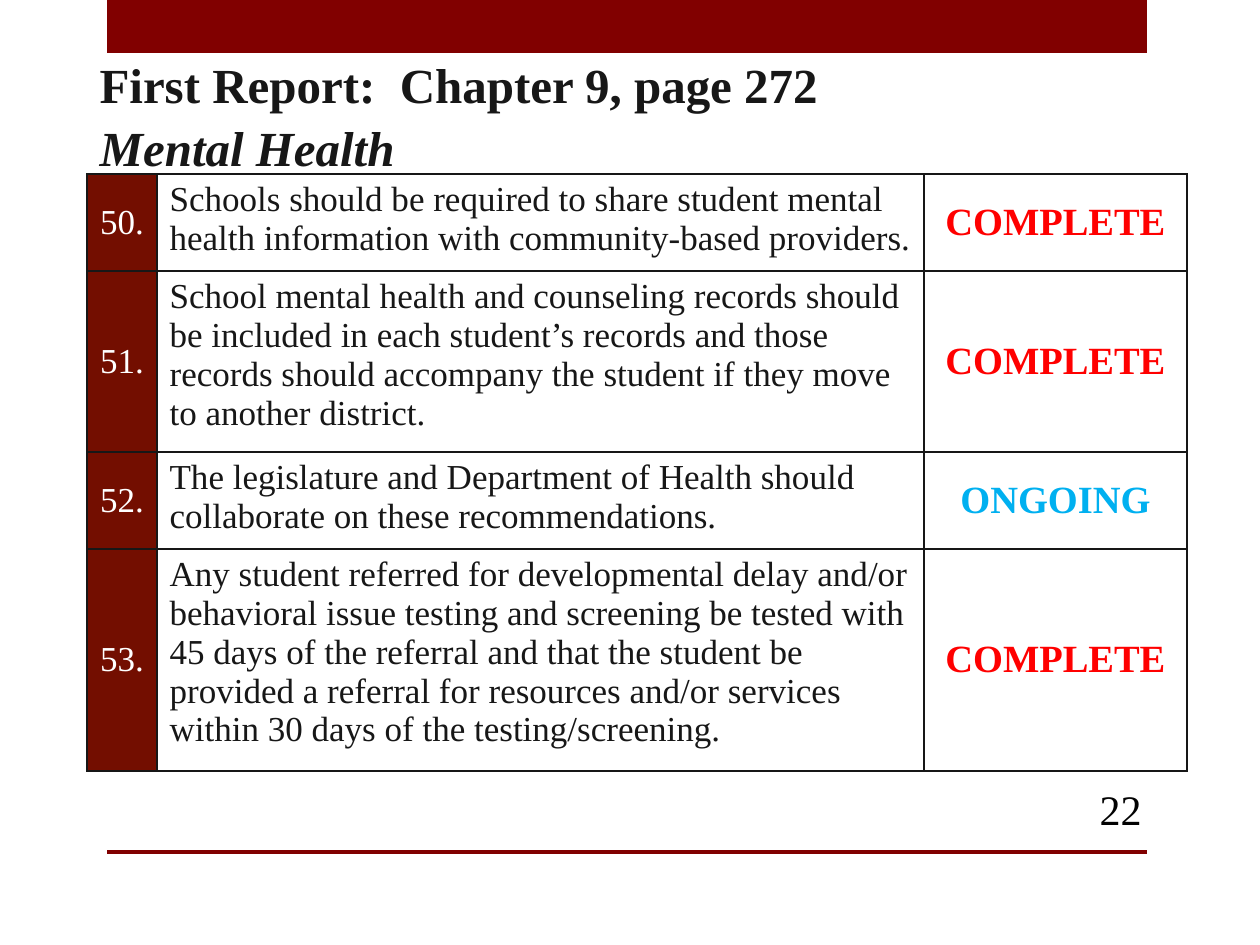
from lxml import etree
from pptx import Presentation
from pptx.dml.color import RGBColor
from pptx.enum.shapes import MSO_SHAPE
from pptx.enum.text import MSO_ANCHOR, MSO_AUTO_SIZE, PP_ALIGN
from pptx.oxml.ns import qn
from pptx.util import Pt

RECT = MSO_SHAPE.RECTANGLE
TOP, MIDDLE = MSO_ANCHOR.TOP, MSO_ANCHOR.MIDDLE
LEFT, CENTER, RIGHT = PP_ALIGN.LEFT, PP_ALIGN.CENTER, PP_ALIGN.RIGHT
PX = 914400 / 126
MAROON, BRICK, INK = "810000", "730E00", "171717"
COLORS = {"COMPLETE": "FF0000", "ONGOING": "00B0F0"}


def px(*sizes):
    return [round(size * PX) for size in sizes]


def write(para, text, size=20, color=INK, bold=False, italic=False, align=LEFT):
    para.alignment = align
    run = para.add_run()
    run.text = text
    font = run.font
    font.name, font.size = "Times New Roman", Pt(size)
    font.bold, font.italic = bold, italic
    font.color.rgb = RGBColor.from_string(color)


deck = Presentation()
deck.slide_width, deck.slide_height = px(1260, 945)
slide = deck.slides.add_slide(deck.slide_layouts[5])
shapes = slide.shapes

# Top band and bottom rule
for top, height in ((0, 53), (850, 4)):
    bar = shapes.add_shape(RECT, *px(107, top, 1040, height))
    bar.shadow.inherit = False
    bar.fill.solid()
    bar.fill.fore_color.rgb = RGBColor.from_string(MAROON)
    bar.line.fill.background()

# Title
title = shapes.title
title.left, title.top, title.width, title.height = px(87, 42, 1018, 131)
frame = title.text_frame
frame.word_wrap = True
frame.auto_size = MSO_AUTO_SIZE.NONE
frame.vertical_anchor = TOP
frame.margin_top = px(12)[0]
write(frame.paragraphs[0], "First Report:  Chapter 9, page 272", size=28, bold=True)
topic = frame.add_paragraph()
topic.space_before = Pt(2.5)
write(topic, "Mental Health", size=28, bold=True, italic=True)

# Table of recommendations: row height, advice, status
rows = [
    (97, "Schools should be required to share student mental health information "
         "with community-based providers.", "COMPLETE"),
    (181, "School mental health and counseling records should be included in each "
          "student’s records and those records should accompany the student if "
          "they move to another district.", "COMPLETE"),
    (97, "The legislature and Department of Health should collaborate on these "
         "recommendations.", "ONGOING"),
    (222, "Any student referred for developmental delay and/or behavioral issue "
          "testing and screening be tested with 45 days of the referral and that "
          "the student be provided a referral for resources and/or services within "
          "30 days of the testing/screening.", "COMPLETE"),
]
widths = px(70, 767, 263)
table = shapes.add_table(len(rows), 3, *px(87, 174, 1100, 597)).table
table.first_row = table.horz_banding = False
for column, width in zip(table.columns, widths):
    column.width = width

for index, (height, advice, status) in enumerate(rows):
    table.rows[index].height = px(height)[0]
    number, detail, state = table.rows[index].cells
    for cell in (number, detail, state):
        props = cell._tc.get_or_add_tcPr()
        for side in ("lnL", "lnR", "lnT", "lnB"):
            line = etree.SubElement(props, qn("a:" + side), w=str(Pt(1)))
            fill = etree.SubElement(line, qn("a:solidFill"))
            etree.SubElement(fill, qn("a:srgbClr"), val=INK)
        cell.fill.background()
        cell.vertical_anchor = TOP if cell is detail else MIDDLE
    number.fill.solid()
    number.fill.fore_color.rgb = RGBColor.from_string(BRICK)
    write(number.text_frame.paragraphs[0], f"{50 + index}.", color="FFFFFF", align=CENTER)
    write(detail.text_frame.paragraphs[0], advice)
    write(state.text_frame.paragraphs[0], status, size=22, color=COLORS[status],
          bold=True, align=CENTER)

# Page number
frame = shapes.add_textbox(*px(1050, 784, 104, 50)).text_frame
frame.word_wrap = True
frame.vertical_anchor = MIDDLE
write(frame.paragraphs[0], "22", size=24, color="020202", align=RIGHT)

deck.save("out.pptx")
